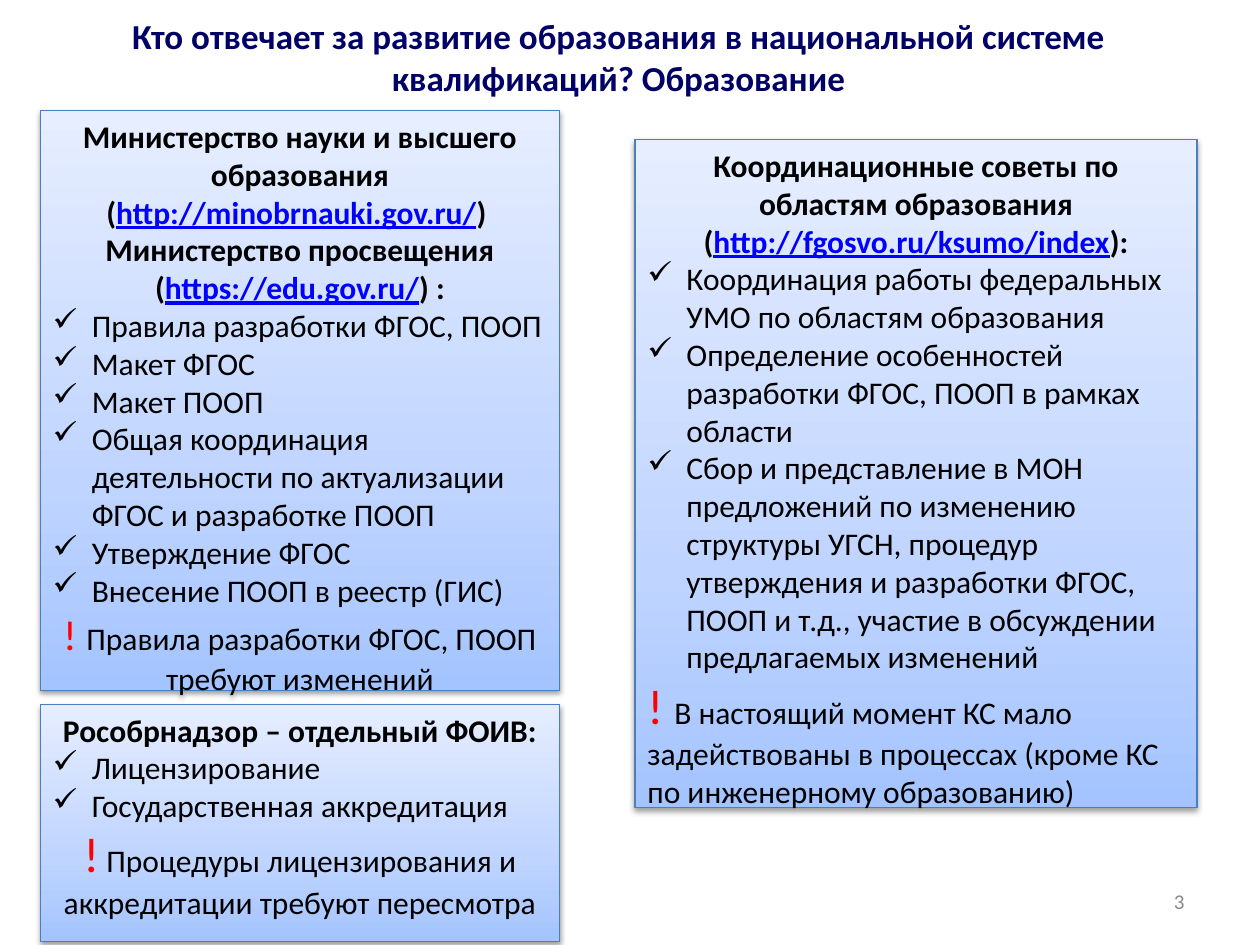
from lxml import etree
from pptx import Presentation
from pptx import util as u
from pptx.dml.color import RGBColor
from pptx.enum import shapes, text
from pptx.oxml import parse_xml
from pptx.oxml.ns import nsdecls, qn

COLORS = {"title": "000066", "text": "000000", "link": "0000FF", "alert": "FF0000",
          "border": "4B7EBC", "number": "898989", "shadow": "000000"}
GRADIENT = [(0, "A4C4FF"), (35, "BFD4FF"), (100, "E6EEFF")]
CENTER, LEFT, RIGHT = text.PP_ALIGN.CENTER, text.PP_ALIGN.LEFT, text.PP_ALIGN.RIGHT
INDENT = u.Inches(0.31)

PANELS = [
    {"at": (0.32, 0.88, 4.12, 4.6),
     "heads": [("Министерство науки и высшего образования (", "http://minobrnauki.gov.ru/", ") "),
               ("Министерство просвещения (", "https://edu.gov.ru/", ") :")],
     "duties": ["Правила разработки ФГОС, ПООП", "Макет ФГОС", "Макет ПООП",
                "Общая координация деятельности по актуализации ФГОС и разработке ПООП",
                "Утверждение ФГОС", "Внесение ПООП в реестр (ГИС)"],
     "alert": ("Правила разработки ФГОС, ПООП требуют изменений", "! ", 24, CENTER)},
    {"at": (0.32, 5.59, 4.12, 1.88),
     "heads": [("Рособрнадзор – отдельный ФОИВ:",)],
     "duties": ["Лицензирование", "Государственная аккредитация"],
     "alert": (" Процедуры лицензирования и аккредитации требуют пересмотра", "!", 28, CENTER)},
    {"at": (5.04, 1.11, 4.46, 5.3),
     "heads": [("Координационные советы по областям образования (",
                "http://fgosvo.ru/ksumo/index", "):")],
     "duties": ["Координация работы федеральных УМО по областям образования",
                "Определение особенностей разработки ФГОС, ПООП в рамках области",
                "Сбор и представление в МОН предложений по изменению структуры УГСН, "
                "процедур утверждения и разработки ФГОС, ПООП и т.д., участие в обсуждении "
                "предлагаемых изменений"],
     "alert": ("В настоящий момент КС мало задействованы в процессах "
               "(кроме КС по инженерному образованию)", "! ", 28, LEFT)},
]


def add_run(p, words, color="text", size=18, **extra):
    """Append a formatted run to a paragraph."""
    r = p.add_run()
    r.text = words
    for name, value in {"name": "Calibri", "size": u.Pt(size), "bold": False, **extra}.items():
        setattr(r.font, name, value)
    r.font.color.rgb = RGBColor.from_string(COLORS[color])


def add_paragraph(tf, align):
    """Return the unused first paragraph or a new one, aligned."""
    first = tf.paragraphs[0]
    p = tf.add_paragraph() if first.runs else first
    p.alignment = align
    return p


def add_heading(tf, parts):
    """Add a bold centred heading whose second part is a web address."""
    p = add_paragraph(tf, CENTER)
    for i, part in enumerate(parts):
        is_link = i == 1
        add_run(p, part, "link" if is_link else "text", bold=True, underline=is_link)


def add_duty(tf, words):
    """Add a paragraph with a check mark and hanging indent."""
    p = add_paragraph(tf, LEFT)
    add_run(p, words)
    pPr = p._p.get_or_add_pPr()
    pPr.set("marL", str(INDENT))
    pPr.set("indent", str(-INDENT))
    etree.SubElement(pPr, qn("a:buChar"), char="✓")


def add_alert(tf, words, mark, size, align):
    """Add a remark opened by a large red exclamation mark."""
    p = add_paragraph(tf, align)
    add_run(p, mark, "alert", size)
    add_run(p, words)


def style_panel(sp):
    """Give a panel its gradient, border and soft shadow."""
    stops = "".join(f'<a:gs pos="{pos * 1000}"><a:srgbClr val="{color}"/></a:gs>'
                    for pos, color in GRADIENT)
    sp._element.spPr.append(parse_xml(
        f'<a:gradFill {nsdecls("a")} rotWithShape="1"><a:gsLst>{stops}</a:gsLst>'
        '<a:lin ang="16200000" scaled="0"/></a:gradFill>'))
    sp.line.color.rgb = RGBColor.from_string(COLORS["border"])
    sp.line.width = u.Pt(0.75)
    sp.shadow.inherit = False
    sp._element.spPr.find(qn("a:effectLst")).append(parse_xml(
        f'<a:outerShdw {nsdecls("a")} blurRad="{u.Pt(3.1)}" dist="{u.Pt(1.6)}" dir="5400000" '
        f'rotWithShape="0"><a:srgbClr val="{COLORS["shadow"]}"><a:alpha val="38000"/>'
        '</a:srgbClr></a:outerShdw>'))


def add_panel(s, at, heads, duties, alert):
    """Add one body's panel with headings, duties and a remark."""
    sp = s.shapes.add_shape(shapes.MSO_SHAPE.RECTANGLE, *map(u.Inches, at))
    style_panel(sp)
    tf = sp.text_frame
    tf.word_wrap = True
    tf.vertical_anchor = text.MSO_ANCHOR.TOP
    for parts in heads:
        add_heading(tf, parts)
    for words in duties:
        add_duty(tf, words)
    add_alert(tf, *alert)


def add_title(s, words):
    """Place and fill the title placeholder."""
    sp = s.shapes.title
    for name, value in zip(("left", "top", "width", "height"), (0.19, 0.02, 9.44, 0.86)):
        setattr(sp, name, u.Inches(value))
    sp.text_frame.vertical_anchor = text.MSO_ANCHOR.MIDDLE
    add_run(add_paragraph(sp.text_frame, CENTER), words, "title", 20, bold=True)


def add_page_number(s, number):
    """Add the page number at the lower right."""
    tf = s.shapes.add_textbox(*map(u.Inches, (7.17, 6.95, 2.33, 0.4))).text_frame
    tf.word_wrap = True
    tf.vertical_anchor = text.MSO_ANCHOR.MIDDLE
    add_run(add_paragraph(tf, RIGHT), number, "number", 12)


def main():
    """Build and save the slide."""
    prs = Presentation()
    prs.slide_width, prs.slide_height = u.Inches(10), u.Inches(7.5)
    s = prs.slides.add_slide(prs.slide_layouts[5])
    add_title(s, "Кто отвечает за развитие образования в национальной системе "
                 "квалификаций? Образование")
    add_page_number(s, "3")
    for panel in PANELS:
        add_panel(s, **panel)
    prs.save("out.pptx")


if __name__ == "__main__":
    main()
